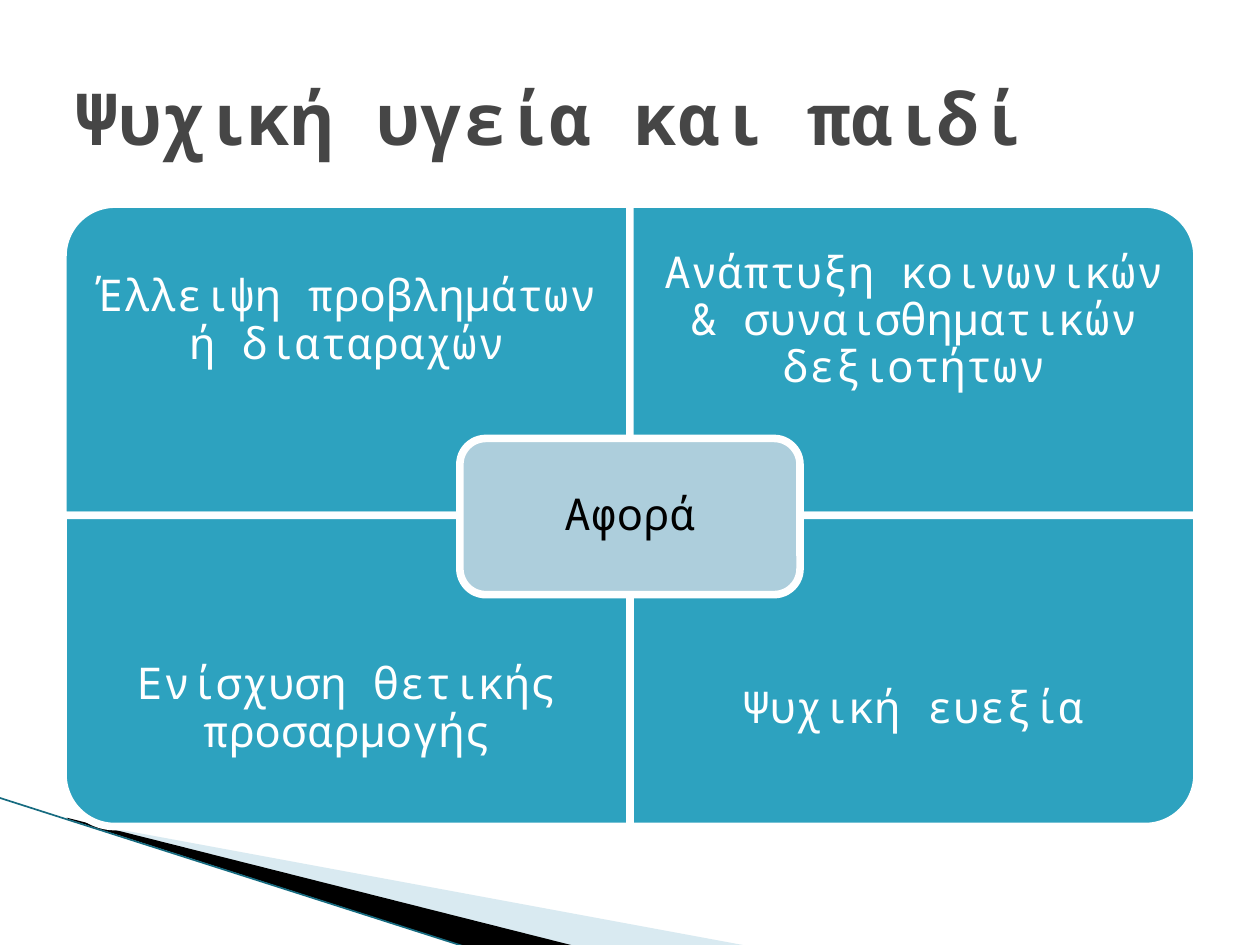
from dataclasses import dataclass

from lxml.etree import SubElement
from pptx import Presentation
from pptx.dml.color import RGBColor
from pptx.enum.shapes import MSO_CONNECTOR, MSO_SHAPE
from pptx.enum.text import MSO_ANCHOR, PP_ALIGN
from pptx.oxml.ns import qn
from pptx.util import Inches, Pt

FONT = "Noto Sans Mono"
WHITE = RGBColor(0xFF, 0xFF, 0xFF)
BLACK = RGBColor(0x00, 0x00, 0x00)
GREY = RGBColor(0x46, 0x46, 0x46)
TEAL = RGBColor(0x2D, 0xA2, 0xBF)
DARK_TEAL = RGBColor(0x16, 0x6B, 0x80)
PALE_BLUE = RGBColor(0xA0, 0xCB, 0xDC)
CENTRE_BLUE = RGBColor(0xAD, 0xCE, 0xDC)

# Matrix grid: two by two quadrants
LEFT, TOP = 0.5, 1.62
QUAD_W, QUAD_H = 4.5, 2.47
LABEL_H = 1.86


@dataclass
class Quadrant:
    text: str
    col: int
    row: int
    rotation: int


QUADRANTS = [
    Quadrant("Έλλειψη προβλημάτων ή διαταραχών", 0, 0, 270),
    Quadrant("Ανάπτυξη κοινωνικών & συναισθηματικών δεξιοτήτων", 1, 0, 0),
    Quadrant("Ενίσχυση θετικής προσαρμογής", 0, 1, 180),
    Quadrant("Ψυχική ευεξία", 1, 1, 90),
]


def add_text(slide, text: str, x: float, y: float, w: float, h: float, *,
             size: float = 25, color: RGBColor = WHITE, bold: bool = False,
             align=PP_ALIGN.CENTER, spacing: float = 0.9,
             inset_x: float = 0.19, inset_y: float = 0.19) -> None:
    box = slide.shapes.add_textbox(Inches(x), Inches(y), Inches(w), Inches(h))
    tf = box.text_frame
    tf.word_wrap = True
    tf.vertical_anchor = MSO_ANCHOR.MIDDLE
    tf.margin_left = tf.margin_right = Inches(inset_x)
    tf.margin_top = tf.margin_bottom = Inches(inset_y)
    p = tf.paragraphs[0]
    p.alignment = align
    p.line_spacing = spacing
    r = p.add_run()
    r.text = text
    r.font.name = FONT
    r.font.size = Pt(size)
    r.font.bold = bold
    r.font.color.rgb = color


def add_panel(slide, kind, x: float, y: float, w: float, h: float,
              fill: RGBColor, rotation: int = 0) -> None:
    sp = slide.shapes.add_shape(kind, Inches(x), Inches(y), Inches(w), Inches(h))
    sp.rotation = rotation
    sp.shadow.inherit = False
    sp.fill.solid()
    sp.fill.fore_color.rgb = fill
    sp.line.color.rgb = WHITE
    sp.line.width = Pt(4.33)


def add_quadrant(slide, quad: Quadrant) -> None:
    x, y = LEFT + quad.col * QUAD_W, TOP + quad.row * QUAD_H
    # A quarter turn swaps the sides around the same centre
    w, h = (QUAD_H, QUAD_W) if quad.rotation % 180 else (QUAD_W, QUAD_H)
    add_panel(slide, MSO_SHAPE.ROUND_1_RECTANGLE, x + (QUAD_W - w) / 2,
              y + (QUAD_H - h) / 2, w, h, TEAL, quad.rotation)
    label_y = y + quad.row * (QUAD_H - LABEL_H)
    add_text(slide, quad.text, x, label_y, QUAD_W, LABEL_H)


def add_wedge(slide, points: list[tuple[float, float]], fill: RGBColor,
              opacity: int = 100) -> None:
    start, *rest = [(Inches(x), Inches(y)) for x, y in points]
    builder = slide.shapes.build_freeform(*start)
    builder.add_line_segments(rest, close=True)
    sp = builder.convert_to_shape()
    sp.shadow.inherit = False
    sp.fill.solid()
    sp.fill.fore_color.rgb = fill
    sp.line.fill.background()
    if opacity < 100:
        color = sp.fill._xPr.find(".//" + qn("a:srgbClr"))
        SubElement(color, qn("a:alpha"), val=str(opacity * 1000))


def main() -> None:
    prs = Presentation()
    prs.slide_width, prs.slide_height = Inches(10), Inches(7.5)
    slide = prs.slides.add_slide(prs.slide_layouts[6])

    # Corner decoration
    add_wedge(slide, [(0.55, 6.51), (5.95, 7.51), (4.56, 7.51), (0.55, 6.5)],
              PALE_BLUE, opacity=40)
    add_wedge(slide, [(0.53, 6.49), (4.57, 7.51), (3.72, 7.52), (0.54, 6.5)],
              BLACK)
    edge = slide.shapes.add_connector(MSO_CONNECTOR.STRAIGHT, Inches(-0.01),
                                      Inches(6.33), Inches(3.71), Inches(7.52))
    edge.line.color.rgb = DARK_TEAL
    edge.line.width = Pt(0.95)
    SubElement(edge._element.spPr, qn("a:effectLst"))

    # Matrix
    for quad in QUADRANTS:
        add_quadrant(slide, quad)

    # Centre
    add_panel(slide, MSO_SHAPE.ROUNDED_RECTANGLE, 3.65, 3.48, 2.7, 1.24,
              CENTRE_BLUE)
    add_text(slide, "Αφορά", 3.71, 3.54, 2.58, 1.12, color=BLACK,
             inset_x=0.1, inset_y=0.1)

    # Title
    add_text(slide, "Ψυχική υγεία και παιδί", 0.5, 0.3, 9, 1.25, size=41,
             color=GREY, bold=True, align=PP_ALIGN.LEFT, spacing=1.0,
             inset_x=0.1, inset_y=0.05)

    prs.save("out.pptx")


if __name__ == "__main__":
    main()
